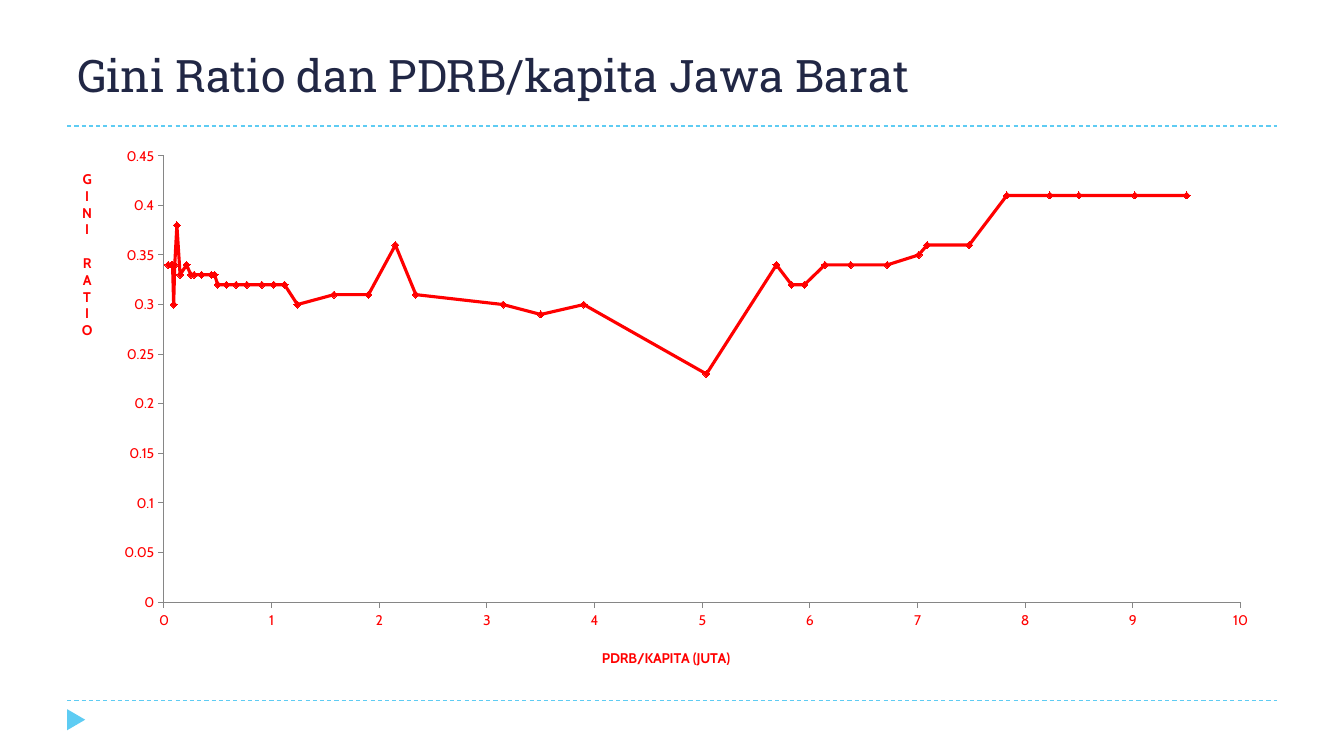
from lxml import etree
from pptx import Presentation
from pptx.chart.data import XyChartData
from pptx.dml.color import RGBColor
from pptx.enum.chart import XL_CHART_TYPE, XL_MARKER_STYLE, XL_TICK_MARK
from pptx.enum.dml import MSO_LINE
from pptx.enum.shapes import MSO_CONNECTOR, MSO_SHAPE
from pptx.enum.text import MSO_ANCHOR
from pptx.oxml.ns import qn
from pptx.util import Inches, Pt

SMOOTH = XL_CHART_TYPE.XY_SCATTER_SMOOTH
DIAMOND = XL_MARKER_STYLE.DIAMOND
OUT, NONE = XL_TICK_MARK.OUTSIDE, XL_TICK_MARK.NONE
DASH = MSO_LINE.DASH
LINE = MSO_CONNECTOR.STRAIGHT
TRIANGLE = MSO_SHAPE.ISOSCELES_TRIANGLE
BOTTOM = MSO_ANCHOR.BOTTOM

HEX = {"sky": "5ECCF3", "navy": "212745", "red": "FF0000", "grey": "868686"}
RGB = {name: RGBColor.from_string(code) for name, code in HEX.items()}

deck = Presentation()
deck.slide_width, deck.slide_height = Inches(13.33), Inches(7.5)
slide = deck.slides.add_slide(deck.slide_layouts[6])
shapes = slide.shapes
left = int(deck.slide_width / 20)
width = deck.slide_width - 2 * left


def place(parent, index, **box):
    """Set a manual layout, in shares of the chart, as child number index."""
    for old in parent.findall(qn("c:layout")):
        parent.remove(old)
    layout = etree.Element(qn("c:layout"))
    manual = etree.SubElement(layout, qn("c:manualLayout"))
    if "w" in box:
        etree.SubElement(manual, qn("c:layoutTarget")).set("val", "inner")
    for side in "xy":
        etree.SubElement(manual, qn(f"c:{side}Mode")).set("val", "edge")
    for key, share in box.items():
        etree.SubElement(manual, qn(f"c:{key}")).set("val", str(share))
    parent.insert(index, layout)


# Dashed rules and the corner marker
for top in (6.95, 1.25):
    rule = shapes.add_connector(LINE, left, Inches(top), left + width, Inches(top))
    rule.line.color.rgb = RGB["sky"]
    rule.line.width = Pt(0.75)
    rule.line.dash_style = DASH
    etree.SubElement(rule._element.spPr, qn("a:effectLst"))

mark = shapes.add_shape(TRIANGLE, Inches(0.65), Inches(7.05), Inches(0.21), Inches(0.18))
mark.rotation = 90
mark.shadow.inherit = False
mark.fill.solid()
mark.fill.fore_color.rgb = RGB["sky"]
mark.line.fill.background()

# Title
frame = shapes.add_textbox(left, Inches(0.17), width, Inches(0.89)).text_frame
frame.word_wrap = True
frame.vertical_anchor = BOTTOM
run = frame.paragraphs[0].add_run()
run.text = "Gini Ratio dan PDRB/kapita Jawa Barat"
run.font.name, run.font.size = "Roboto Slab", Pt(32)
run.font.color.rgb = RGB["navy"]

# Income per head (millions) and Gini ratio
income = [0.04, 0.07, 0.08, 0.09, 0.1, 0.12, 0.15, 0.21, 0.25, 0.28, 0.35,
          0.44, 0.47, 0.5, 0.58, 0.67, 0.77, 0.91, 1.02, 1.12, 1.24, 1.58,
          1.9, 2.15, 2.34, 3.15, 3.5, 3.9, 5.04, 5.69, 5.83, 5.95, 6.14,
          6.38, 6.72, 7.01, 7.09, 7.48, 7.83, 8.23, 8.5, 9.02, 9.5]
gini = [0.34, 0.34, 0.34, 0.3, 0.34, 0.38, 0.33, 0.34, 0.33, 0.33, 0.33,
        0.33, 0.33, 0.32, 0.32, 0.32, 0.32, 0.32, 0.32, 0.32, 0.3, 0.31,
        0.31, 0.36, 0.31, 0.3, 0.29, 0.3, 0.23, 0.34, 0.32, 0.32, 0.34,
        0.34, 0.34, 0.35, 0.36, 0.36, 0.41, 0.41, 0.41, 0.41, 0.41]
data = XyChartData()
points = data.add_series("Series 1")
for x, y in zip(income, gini):
    points.add_data_point(x, y)

# Chart
chart = shapes.add_chart(SMOOTH, left, Inches(1.33), width, Inches(5.4), data).chart
chart.has_legend = chart.has_title = False
chart.font.name, chart.font.size = "Cabin", Pt(10)
chart.font.color.rgb = RGB["red"]
place(chart._chartSpace.chart.plotArea, 0, x=0.08, y=0.04, w=0.89, h=0.82)

curve = chart.plots[0].series[0]
curve.smooth = True
curve.format.line.color.rgb = RGB["red"]
curve.format.line.width = Pt(2.25)
curve.marker.style, curve.marker.size = DIAMOND, 5
curve.marker.format.fill.solid()
curve.marker.format.fill.fore_color.rgb = RGB["red"]
curve.marker.format.line.color.rgb = RGB["red"]

# Axes: end, step, name, title position
axes = [(chart.category_axis, 10, 1, "PDRB/KAPITA (JUTA)", 0.44, 0.94),
        (chart.value_axis, 0.45, 0.05, "GINI RATIO", 0.01, 0.06)]
for axis, end, step, name, x, y in axes:
    axis.minimum_scale, axis.maximum_scale, axis.major_unit = 0, end, step
    axis.has_major_gridlines = False
    axis.major_tick_mark, axis.minor_tick_mark = OUT, NONE
    axis.tick_labels.number_format = "General"
    axis.tick_labels.number_format_is_linked = False
    axis.format.line.color.rgb = RGB["grey"]
    axis.format.line.width = Pt(0.75)
    run = axis.axis_title.text_frame.paragraphs[0].add_run()
    run.text = name
    run.font.name, run.font.size, run.font.bold = "Cabin", Pt(10), True
    run.font.color.rgb = RGB["red"]
    place(axis.axis_title._element, 1, x=x, y=y)

# Stack the letters of the upright title
body = chart.value_axis.axis_title._element.find(".//" + qn("a:bodyPr"))
body.set("rot", "0")
body.set("vert", "wordArtVert")

deck.save("out.pptx")
